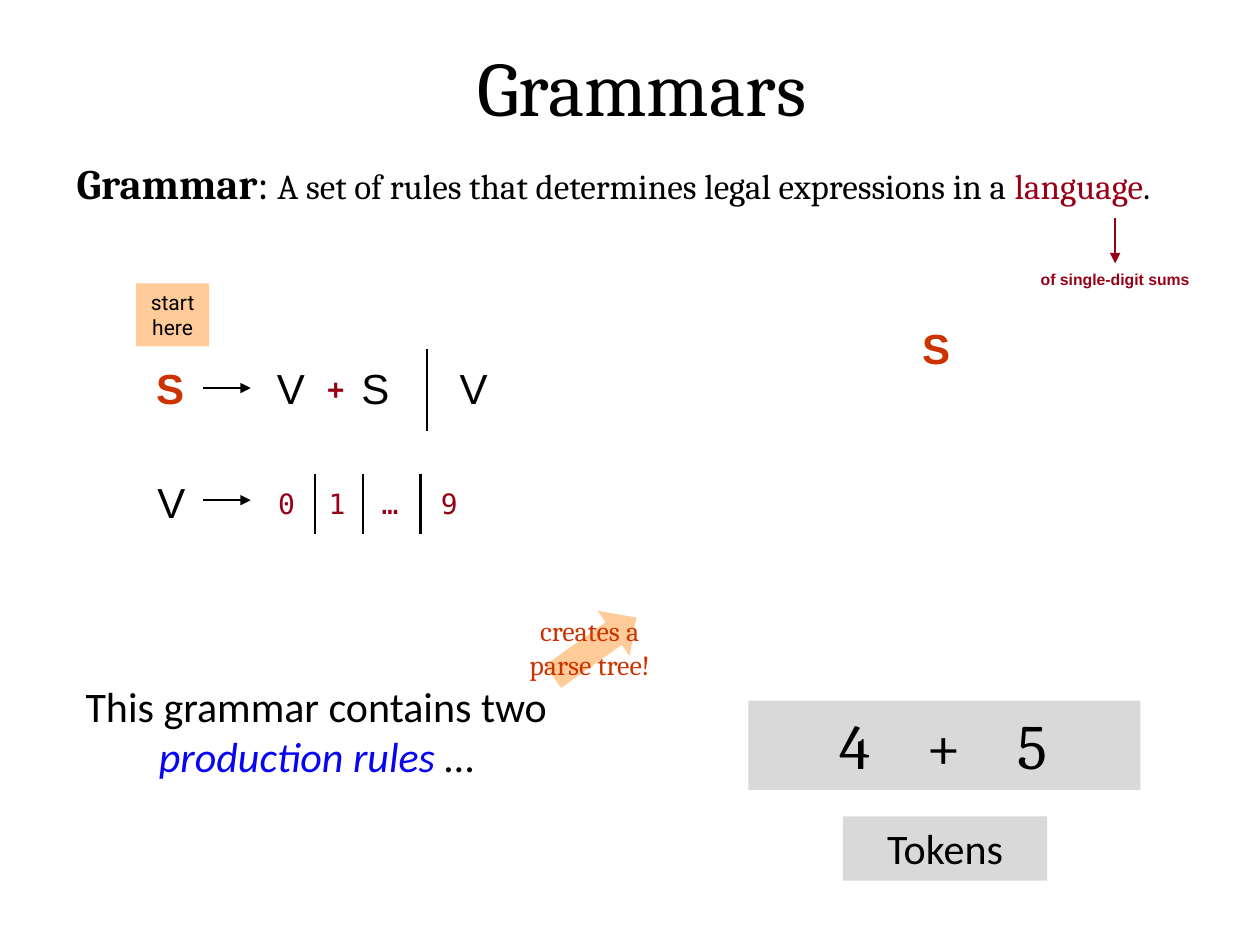
import pptx
import pptx.util
import pptx.dml.color
import pptx.enum.dml
import pptx.enum.shapes
import pptx.enum.text
import pptx.oxml.ns
from lxml import etree

Inches, Pt = pptx.util.Inches, pptx.util.Pt
RGBColor = pptx.dml.color.RGBColor
ALIGN = pptx.enum.text.PP_ALIGN
SHAPE = pptx.enum.shapes.MSO_SHAPE
qn = pptx.oxml.ns.qn

BLACK = RGBColor(0x00, 0x00, 0x00)
RED = RGBColor(0xCC, 0x33, 0x00)
MAROON = RGBColor(0x96, 0x01, 0x17)
BLUE = RGBColor(0x07, 0x03, 0xF3)
PEACH = RGBColor(0xFF, 0xCC, 0x99)
GREY = RGBColor(0xD9, 0xD9, 0xD9)
MONO = "DejaVu Sans Mono"

# Each span is its text and what differs from the format of its box.
TITLE = [("Grammars", {})]
DEFINITION = [
    ("Grammar", {"size": 24, "bold": True}),
    (": ", {"size": 24}),
    ("A set of rules that determines legal expressions in a ", {}),
    ("language", {"color": MAROON}),
    (".", {}),
]
SUM_RULE = [("S", {"color": RED, "bold": True}), ("\tV\tS", {})]
SUMMARY = [
    ("This grammar contains two ", {}),
    ("production rules ", {"color": BLUE, "italic": True}),
    ("…", {}),
]
DIGITS = [("0", 2.11), ("1", 2.51), ("…", 2.93), ("9", 3.4)]
DIGIT_BARS = [2.5, 2.88, 3.34]
RULE_ARROW_ROWS = [3.08, 3.97]

deck = pptx.Presentation()
deck.slide_width, deck.slide_height = Inches(10), Inches(7.5)
page = deck.slides.add_slide(deck.slide_layouts[5])


def write(box, spans, font="Calibri", size=24, color=BLACK, bold=False,
          align=ALIGN.CENTER, tabs=(), tab_align="l", inset=0.1):
    """Fill a box with one paragraph; spans is a string or (text, format) pairs."""
    frame = box.text_frame
    frame.auto_size = pptx.enum.text.MSO_AUTO_SIZE.NONE
    frame.word_wrap = True
    frame.vertical_anchor = pptx.enum.text.MSO_ANCHOR.TOP
    frame.margin_left = Inches(inset)
    para = frame.paragraphs[0]
    para.alignment = align
    if tabs:
        stops = etree.SubElement(para._p.get_or_add_pPr(), qn("a:tabLst"))
        for position in tabs:
            etree.SubElement(stops, qn("a:tab"), pos=str(Inches(position)), algn=tab_align)
    for text, style in [(spans, {})] if isinstance(spans, str) else spans:
        span = para.add_run()
        span.text = text
        span.font.name = font
        span.font.size = Pt(style.get("size", size))
        span.font.bold = style.get("bold", bold)
        span.font.italic = style.get("italic", False)
        span.font.color.rgb = style.get("color", color)
    return box


def add_text(left, top, width, height, spans, **style):
    box = page.shapes.add_textbox(*map(Inches, (left, top, width, height)))
    return write(box, spans, **style)


def add_block(left, top, width, height, fill, kind=SHAPE.RECTANGLE):
    block = page.shapes.add_shape(kind, *map(Inches, (left, top, width, height)))
    block.shadow.inherit = False
    block.fill.solid()
    block.fill.fore_color.rgb = fill
    block.line.fill.background()
    return block


def add_line(x1, y1, x2, y2, color=BLACK, arrow=False):
    line = page.shapes.add_connector(
        pptx.enum.shapes.MSO_CONNECTOR.STRAIGHT, *map(Inches, (x1, y1, x2, y2)))
    line.line.color.rgb = color
    line.line.width = Pt(1.5)
    if arrow:
        etree.SubElement(line.line._get_or_add_ln(), qn("a:tailEnd"), type="triangle")
    etree.SubElement(line._element.spPr, qn("a:effectLst"))
    return line


# Title and definition
title = page.shapes.title
title.left, title.top, title.width, title.height = map(Inches, (0.84, 0.26, 8.51, 0.83))
write(title, TITLE, font="Cambria", size=44)
add_text(0.51, 1.2, 9.23, 0.5, DEFINITION, font="Cambria", size=20, align=ALIGN.LEFT)
note = add_text(7.91, 2.09, 1.88, 0.25, "of single-digit sums",
                font="Arial", size=9, color=MAROON, bold=True)
note_arrow = add_line(8.85, 1.73, 8.85, 2.09, MAROON, arrow=True)
note_arrow.end_connect(note, 0)

# Production rules
symbol = {"font": "Arial", "align": ALIGN.LEFT}
terminal = {"font": MONO, "size": 16, "color": MAROON, "align": ALIGN.LEFT}
write(add_block(1.08, 2.25, 0.58, 0.5, PEACH), "start here", font="Roboto", size=12)
add_text(1.14, 2.83, 2.07, 0.5, SUM_RULE, tabs=(0.96, 1.63), **symbol)
add_text(2.5, 2.9, 0.34, 0.37, "+", bold=True, **terminal)
add_line(3.39, 2.77, 3.39, 3.42)
add_text(3.55, 2.83, 0.42, 0.5, "V", **symbol)
add_text(1.15, 3.73, 0.45, 0.5, "V", **symbol)
for row in RULE_ARROW_ROWS:
    add_line(1.61, row, 1.99, row, arrow=True)
for digit, left in DIGITS:
    add_text(left, 3.81, 0.34, 0.37, digit, **terminal)
for bar in DIGIT_BARS:
    add_line(bar, 3.76, bar, 4.24)
add_text(0.34, 5.35, 4.34, 0.91, SUMMARY)

# Parse tree and tokens
add_text(7.22, 2.51, 0.43, 0.5, "S", color=RED, bold=True, **symbol)
add_block(4.5, 4.73, 0.44, 0.81, PEACH, SHAPE.DOWN_ARROW).rotation = 234.6
add_text(3.99, 4.82, 1.38, 0.64, "creates a parse tree!", font="Cambria", size=16, color=RED)
write(add_block(5.94, 5.56, 3.11, 0.71, GREY), "4\t+\t5", font="Cambria", size=36,
      align=ALIGN.LEFT, tabs=(0.83, 1.53), tab_align="ctr", inset=0.72)
write(add_block(6.69, 6.48, 1.62, 0.51, GREY), "Tokens")

deck.save("out.pptx")
